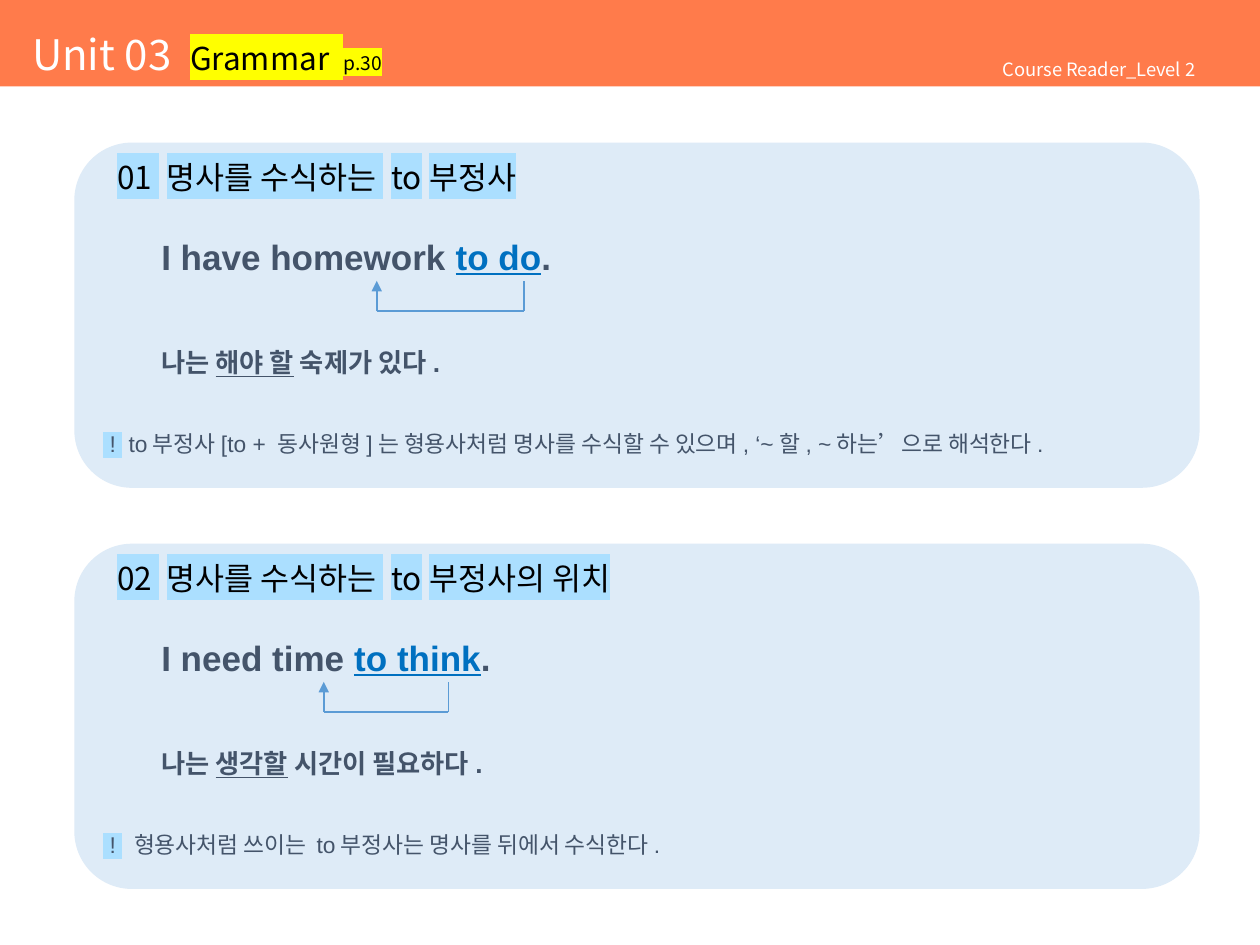
"""Build the Unit 03 grammar slide: two rule panels with modifier arrows."""
from lxml.etree import SubElement
from pptx import Presentation
from pptx.dml.color import RGBColor
from pptx.enum.shapes import MSO_CONNECTOR as Link, MSO_SHAPE as Preset
from pptx.enum.text import MSO_ANCHOR as Anchor, MSO_AUTO_SIZE as Fit, PP_ALIGN as Align
from pptx.oxml.ns import qn
from pptx.util import Pt

ORANGE = RGBColor(0xFF, 0x7B, 0x4B)
PALE = RGBColor(0xDE, 0xEB, 0xF7)
SKY = RGBColor(0xAB, 0xDF, 0xFF)
YELLOW = RGBColor(0xFF, 0xFF, 0x00)
WHITE = RGBColor(0xFF, 0xFF, 0xFF)
BLACK = RGBColor(0, 0, 0)
SLATE = RGBColor(0x44, 0x54, 0x6A)
BLUE = RGBColor(0x00, 0x70, 0xC0)
ARROW = RGBColor(0x5B, 0x9B, 0xD5)
KOREAN, LATIN = "Noto Sans CJK KR", "Arial"

STYLES = {
    "unit": (24, KOREAN, WHITE, None, {}),
    "topic": (18, KOREAN, BLACK, YELLOW, {}),
    "page": (11, KOREAN, BLACK, YELLOW, {}),
    "book": (10.5, KOREAN, WHITE, None, {}),
    "heading": (18, KOREAN, BLACK, SKY, {}),
    "sentence": (20, LATIN, SLATE, None, {"bold": True}),
    "infinitive": (20, LATIN, BLUE, None, {"bold": True, "underline": True}),
    "meaning": (15, LATIN, SLATE, None, {"bold": True}),
    "stress": (15, LATIN, SLATE, None, {"bold": True, "underline": True}),
    "mark": (13, LATIN, SLATE, SKY, {}),
    "note": (13, LATIN, SLATE, None, {}),
}

TITLE = [("Unit 03  ", "unit"), ("Grammar  ", "topic"), ("p.30", "page")]
BOOK = [("Course Reader_Level 2", "book")]
RULES = [
    {"lines": [
        [("01 명사를 수식하는 to부정사", "heading")],
        [("I have homework ", "sentence"), ("to do", "infinitive"), (".", "sentence")],
        [("나는 ", "meaning"), ("해야 할", "stress"), (" 숙제가 있다.", "meaning")],
        [(" ! ", "mark"),
         (" to부정사[to + 동사원형]는 형용사처럼 명사를 수식할 수 있으며, ‘~할, ~하는’으로 해석한다.", "note")]],
     "noun": 215.3, "modifier": 299.5},
    {"lines": [
        [("02 명사를 수식하는 to부정사의 위치", "heading")],
        [("I need time ", "sentence"), ("to think", "infinitive"), (".", "sentence")],
        [("나는 ", "meaning"), ("생각할", "stress"), (" 시간이 필요하다.", "meaning")],
        [(" ! ", "mark"), (" 형용사처럼 쓰이는 to부정사는 명사를 뒤에서 수식한다.", "note")]],
     "noun": 185, "modifier": 256.3},
]
LINE_LAYOUT = [(7.8, 0, 0.8), (33.1, 22.6, 1), (33.1, 39.5, 1), (0, 29.8, 1)]

PANEL_LEFT, PANEL_TOP, PANEL_WIDTH, PANEL_HEIGHT, PANEL_STEP = 42.5, 81.5, 643, 197.3, 229.2
BRACKET_TOP, BRACKET_BOTTOM = 79, 96.3


def write_line(paragraph, runs, indent=0, before=0, spacing=1):
    layout = {"alignment": Align.LEFT, "space_before": Pt(before),
              "space_after": Pt(0), "line_spacing": spacing}
    for key, value in layout.items():
        setattr(paragraph, key, value)
    properties = paragraph._p.get_or_add_pPr()
    properties.set("marL", str(Pt(indent)))
    properties.set("indent", "0")
    for text, style in runs:
        size, face, color, marker, emphasis = STYLES[style]
        run = paragraph.add_run()
        run.text = text
        for key, value in {"size": Pt(size), "name": face, **emphasis}.items():
            setattr(run.font, key, value)
        run.font.color.rgb = color
        run_properties = run._r.get_or_add_rPr()
        SubElement(run_properties, qn("a:ea"), typeface=KOREAN)
        if marker is not None:
            highlight = SubElement(run_properties, qn("a:highlight"))
            SubElement(highlight, qn("a:srgbClr"), val=str(marker))
            run_properties.find(qn("a:solidFill")).addnext(highlight)


def set_frame(frame, anchor, left, top, bottom=0):
    layout = {"auto_size": Fit.NONE, "word_wrap": True, "vertical_anchor": anchor,
              "margin_left": Pt(left), "margin_right": Pt(5),
              "margin_top": Pt(top), "margin_bottom": Pt(bottom)}
    for key, value in layout.items():
        setattr(frame, key, value)


def paint(shape, color):
    shape.fill.solid()
    shape.fill.fore_color.rgb = color
    shape.line.fill.background()
    shape.shadow.inherit = False


def add_line(slide, x1, y1, x2, y2, arrow=False):
    line = slide.shapes.add_connector(Link.STRAIGHT, Pt(x1), Pt(y1), Pt(x2), Pt(y2))
    line.line.color.rgb = ARROW
    line.line.width = Pt(1)
    if arrow:
        SubElement(line.line._get_or_add_ln(), qn("a:tailEnd"), type="triangle")
    SubElement(line._element.spPr, qn("a:effectLst"))


def add_header(slide):
    title = slide.shapes.title
    title.left, title.top, title.width, title.height = Pt(0), Pt(0), Pt(720), Pt(49.4)
    paint(title, ORANGE)
    set_frame(title.text_frame, Anchor.BOTTOM, 18.3, 0, 4.1)
    write_line(title.text_frame.paragraphs[0], TITLE)
    book = slide.shapes.add_textbox(Pt(568.1), Pt(32.4), Pt(139), Pt(18.7))
    set_frame(book.text_frame, Anchor.TOP, 5, 2)
    write_line(book.text_frame.paragraphs[0], BOOK, spacing=0.9)


def add_rule(slide, rule, top):
    panel = slide.shapes.add_shape(Preset.ROUNDED_RECTANGLE, Pt(PANEL_LEFT), Pt(top),
                                   Pt(PANEL_WIDTH), Pt(PANEL_HEIGHT))
    paint(panel, PALE)
    frame = panel.text_frame
    set_frame(frame, Anchor.TOP, 7, 3.4)
    for number, (runs, layout) in enumerate(zip(rule["lines"], LINE_LAYOUT)):
        paragraph = frame.add_paragraph() if number else frame.paragraphs[0]
        write_line(paragraph, runs, *layout)
    noun, modifier = rule["noun"], rule["modifier"]
    upper, lower = top + BRACKET_TOP, top + BRACKET_BOTTOM
    add_line(slide, noun, lower, noun, upper, arrow=True)
    add_line(slide, modifier, lower, modifier, upper)
    add_line(slide, noun, lower, modifier, lower)


def main():
    deck = Presentation()
    deck.slide_width, deck.slide_height = Pt(720), Pt(540)
    slide = deck.slides.add_slide(deck.slide_layouts[5])
    add_header(slide)
    for number, rule in enumerate(RULES):
        add_rule(slide, rule, PANEL_TOP + number * PANEL_STEP)
    deck.save("out.pptx")


if __name__ == "__main__":
    main()
